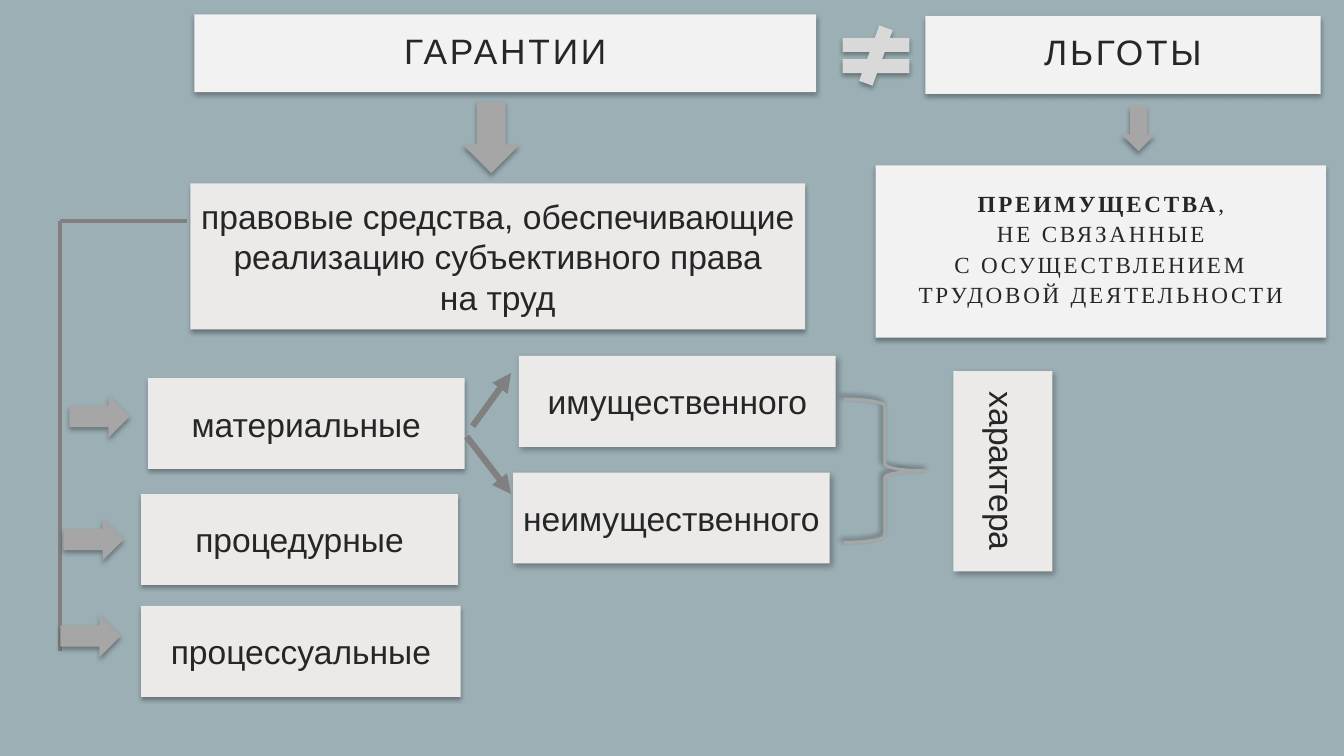
from dataclasses import dataclass

from lxml.etree import SubElement
from pptx import Presentation
from pptx.dml.color import RGBColor
from pptx.enum.shapes import MSO_CONNECTOR, MSO_SHAPE
from pptx.enum.text import MSO_ANCHOR, MSO_AUTO_SIZE, PP_ALIGN
from pptx.oxml.ns import qn
from pptx.util import Cm, Pt


@dataclass(frozen=True)
class Theme:
    background: str = "9BAFB5"
    heading_fill: str = "F2F2F2"
    box_fill: str = "ECEAE8"
    arrow_fill: str = "A6A6A6"
    sign_fill: str = "D9D9D9"
    line: str = "808080"
    ink: str = "262626"
    sans: str = "Arial"
    serif: str = "Times New Roman"
    heading_size: float = 25.2
    body_size: float = 24
    note_size: float = 16.5


THEME = Theme()
SOFT = (32, 3.5, 2.2, 90)
SLANTED = (30, 4.5, 2.6, 53)
BRACE_SHADOW = (40, 4, 3, 225)

GUARANTEES = ("ГАРАНТИИ", (4.9, 0.36, 15.67, 1.96))
BENEFITS = ("ЛЬГОТЫ", (23.32, 0.41, 9.96, 1.96))
BENEFITS_NOTE = (
    [
        [("ПРЕИМУЩЕСТВА", True), (",", False)],
        [("НЕ СВЯЗАННЫЕ", False)],
        [("С ОСУЩЕСТВЛЕНИЕМ ТРУДОВОЙ ДЕЯТЕЛЬНОСТИ", False)],
    ],
    (22.07, 4.17, 11.35, 4.34),
)
BOXES = [
    (["правовые средства, обеспечивающие реализацию субъективного права", "на труд"],
     (4.8, 4.62, 15.49, 3.68), SOFT, "horz"),
    (["материальные"], (3.73, 9.53, 7.98, 2.29), SOFT, "horz"),
    (["процедурные"], (3.56, 12.45, 7.98, 2.29), SOFT, "horz"),
    (["процессуальные"], (3.56, 15.27, 8.05, 2.29), SOFT, "horz"),
    (["имущественного"], (13.08, 8.97, 7.98, 2.29), SLANTED, "horz"),
    (["неимущественного"], (12.93, 11.91, 7.98, 2.29), SLANTED, "horz"),
    (["характера"], (24.03, 9.35, 2.49, 5.05), SLANTED, "vert"),
]
BRACE = (21.26, 10.06, 2.08, 3.61)
NOT_EQUAL = (20.93, 0.64, 2.29, 1.52)
BLOCK_ARROWS = [
    ((1.75, 9.96, 1.52, 1.07), 0),
    ((1.6, 13.06, 1.52, 1.07), 0),
    ((1.52, 15.49, 1.52, 1.07), 0),
    ((11.48, 2.74, 1.8, 1.45), 90),
    ((28.12, 2.82, 1.14, 0.84), 90),
]
LINES = [
    ((4.7, 5.56), (1.52, 5.56), 3, False),
    ((1.52, 16.41), (1.52, 5.56), 3, False),
    ((11.91, 10.74), (12.88, 9.4), 4.5, True),
    ((11.76, 11), (12.88, 12.45), 4.5, True),
]


def paint(fill, color):
    fill.solid()
    fill.fore_color.rgb = RGBColor.from_string(color)


def cast_shadow(shape, opacity, blur, distance, angle):
    shape.shadow.inherit = False
    effects = shape.element.spPr.find(qn("a:effectLst"))
    shadow = SubElement(effects, qn("a:outerShdw"), blurRad=str(Pt(blur)), dist=str(Pt(distance)),
                        dir=str(angle * 60000), algn="ctr", rotWithShape="0")
    color = SubElement(shadow, qn("a:srgbClr"), val="000000")
    SubElement(color, qn("a:alpha"), val=str(opacity * 1000))


def dress(shape, color, shadow=SOFT):
    paint(shape.fill, color)
    shape.line.fill.background()
    cast_shadow(shape, *shadow)


def add_figure(page, kind, place, color, shadow=SOFT, rotation=0):
    shape = page.shapes.add_shape(kind, *map(Cm, place))
    dress(shape, color, shadow)
    shape.rotation = rotation
    return shape


def write(box, paragraphs, size=THEME.body_size, font=THEME.sans, tracking=0,
          spacings=(1,), insets=(0.2, 0.13), direction="horz"):
    frame = box.text_frame
    frame.word_wrap = True
    frame.auto_size = MSO_AUTO_SIZE.NONE
    frame.vertical_anchor = MSO_ANCHOR.MIDDLE
    frame.margin_left = frame.margin_right = Cm(insets[0])
    frame.margin_top = frame.margin_bottom = Cm(insets[1])
    box.element.txBody.bodyPr.set("vert", direction)
    for index, pieces in enumerate(paragraphs):
        para = frame.add_paragraph() if index else frame.paragraphs[0]
        para.alignment = PP_ALIGN.CENTER
        para.line_spacing = spacings[min(index, len(spacings) - 1)]
        para.space_before = para.space_after = Pt(0)
        for text, bold in pieces:
            span = para.add_run()
            span.text = text
            span.font.size = Pt(size)
            span.font.name = font
            span.font.bold = bold
            span.font.color.rgb = RGBColor.from_string(THEME.ink)
            if tracking:
                span.font.element.set("spc", str(tracking * 100)) if hasattr(
                    span.font, "element") else span.text and para.runs[-1]._r.get_or_add_rPr().set(
                    "spc", str(tracking * 100))


def add_line(page, start, end, width, pointed):
    line = page.shapes.add_connector(MSO_CONNECTOR.STRAIGHT, *map(Cm, start + end))
    line.line.width = Pt(width)
    paint(line.line.fill, THEME.line)
    if pointed:
        SubElement(line.line._get_or_add_ln(), qn("a:tailEnd"), type="triangle")
    SubElement(line.element.spPr, qn("a:effectLst"))


def main():
    deck = Presentation()
    deck.slide_width, deck.slide_height = Cm(33.87), Cm(19.05)
    page = deck.slides.add_slide(deck.slide_layouts[5])
    paint(page.background.fill, THEME.background)
    heading = dict(size=THEME.heading_size, tracking=2, insets=(0.76, 0.51))

    text, place = GUARANTEES
    title = page.shapes.title
    title.left, title.top, title.width, title.height = map(Cm, place)
    dress(title, THEME.heading_fill)
    write(title, [[(text, False)]], spacings=(0.9,), **heading)

    for texts, place, shadow, direction in BOXES:
        box = add_figure(page, MSO_SHAPE.RECTANGLE, place, THEME.box_fill, shadow)
        write(box, [[(text, False)] for text in texts], direction=direction)

    brace = page.shapes.add_shape(MSO_SHAPE.LEFT_BRACE, *map(Cm, BRACE))
    brace.rotation = 180
    brace.fill.background()
    paint(brace.line.fill, THEME.arrow_fill)
    brace.line.width = Pt(2.25)
    cast_shadow(brace, *BRACE_SHADOW)

    for line in LINES:
        add_line(page, *line)
    for place, rotation in BLOCK_ARROWS:
        add_figure(page, MSO_SHAPE.RIGHT_ARROW, place, THEME.arrow_fill, rotation=rotation)

    text, place = BENEFITS
    box = add_figure(page, MSO_SHAPE.RECTANGLE, place, THEME.heading_fill)
    write(box, [[(text, False)]], spacings=(0.8,), **heading)
    add_figure(page, MSO_SHAPE.MATH_NOT_EQUAL, NOT_EQUAL, THEME.sign_fill)
    paragraphs, place = BENEFITS_NOTE
    box = add_figure(page, MSO_SHAPE.RECTANGLE, place, THEME.heading_fill)
    write(box, paragraphs, spacings=(0.8, 1.1),
          **{**heading, "size": THEME.note_size, "font": THEME.serif})

    deck.save("out.pptx")


if __name__ == "__main__":
    main()
